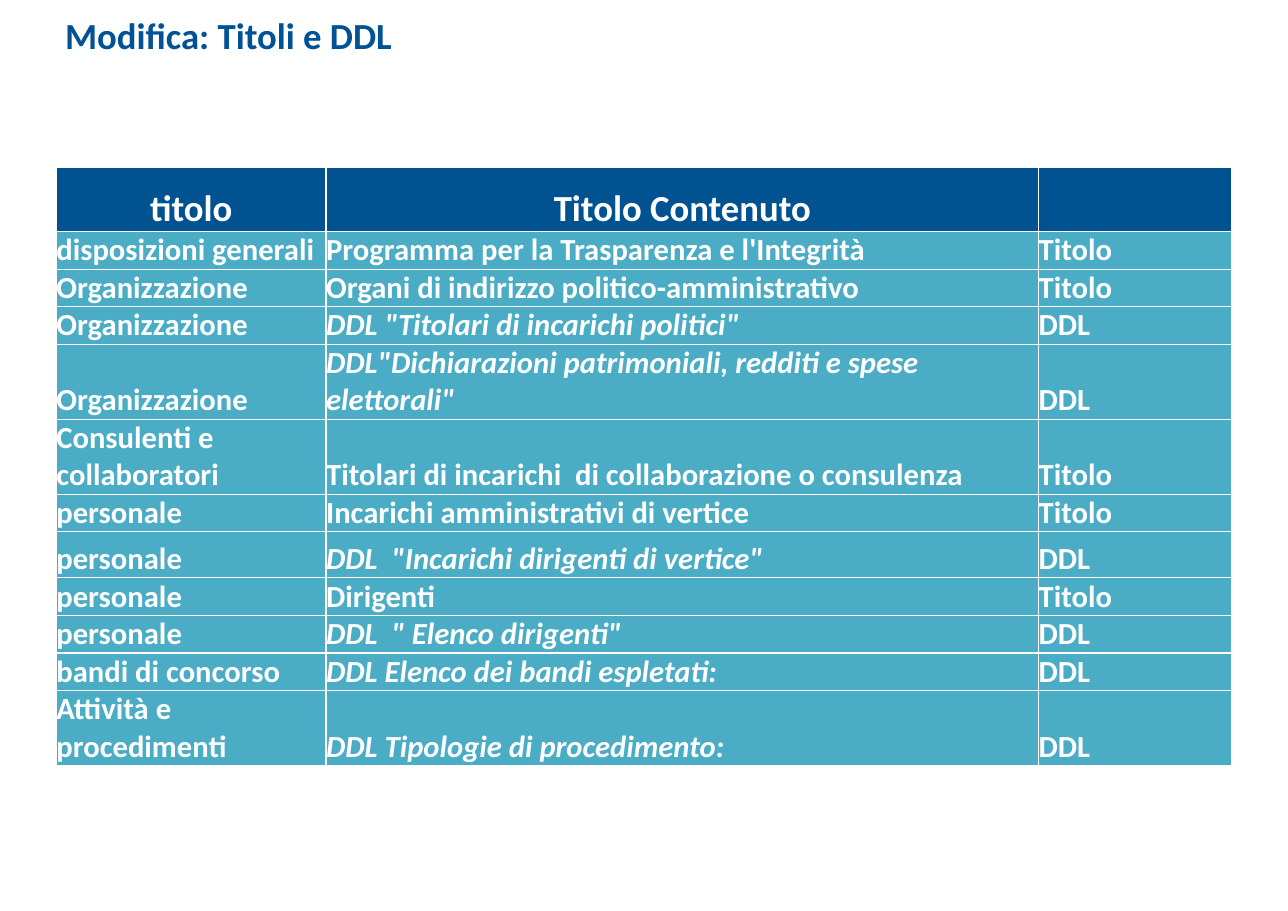
from dataclasses import dataclass

from lxml import etree
from pptx import Presentation
from pptx.dml.color import RGBColor
from pptx.enum import text
from pptx.oxml import ns
from pptx.util import Cm, Pt


@dataclass(frozen=True)
class Theme:
    font: str = "Calibri"
    title: RGBColor = RGBColor(0x00, 0x52, 0x94)
    header: RGBColor = RGBColor(0x00, 0x52, 0x91)
    body: RGBColor = RGBColor(0x4B, 0xAC, 0xC6)
    light: RGBColor = RGBColor(0xFF, 0xFF, 0xFF)
    large: Pt = Pt(24)
    normal: Pt = Pt(20)
    border: Pt = Pt(1)


THEME = Theme()
HEADINGS = ("titolo", "Titolo Contenuto", "")
COLUMN_WIDTHS = (6.22, 16.43, 4.44)
HEADER_HEIGHT, LINE_HEIGHT = 1.48, 0.85
# Section, content, kind, height in lines
ENTRIES = [
    ("disposizioni generali", "Programma per la Trasparenza e l'Integrità", "Titolo", 1),
    ("Organizzazione", "Organi di indirizzo politico-amministrativo", "Titolo", 1),
    ("Organizzazione", 'DDL "Titolari di incarichi politici"', "DDL", 1),
    ("Organizzazione", 'DDL"Dichiarazioni patrimoniali, redditi e spese elettorali"', "DDL", 2),
    ("Consulenti e collaboratori", "Titolari di incarichi  di collaborazione o consulenza", "Titolo", 2),
    ("personale", "Incarichi amministrativi di vertice", "Titolo", 1),
    ("personale", 'DDL  "Incarichi dirigenti di vertice"', "DDL", 1.25),
    ("personale", "Dirigenti", "Titolo", 1),
    ("personale", 'DDL  " Elenco dirigenti"', "DDL", 1),
    ("bandi di concorso", "DDL Elenco dei bandi espletati:", "DDL", 1),
    ("Attività e procedimenti", "DDL Tipologie di procedimento:", "DDL", 2),
]


def style_font(font, size, color):
    font.name = THEME.font
    font.size = size
    font.bold = True
    font.color.rgb = color


def add_borders(cell):
    properties = cell._tc.get_or_add_tcPr()
    for side in ("lnL", "lnR", "lnT", "lnB"):
        line = etree.SubElement(properties, ns.qn(f"a:{side}"), w=str(THEME.border))
        fill = etree.SubElement(line, ns.qn("a:solidFill"))
        etree.SubElement(fill, ns.qn("a:srgbClr"), val=str(THEME.light))


prs = Presentation()
prs.slide_width, prs.slide_height = Cm(29.7), Cm(21)
slide = prs.slides.add_slide(prs.slide_layouts[5])

# Title
title = slide.shapes.title
title.left, title.top, title.width, title.height = Cm(0), Cm(0), Cm(29.7), Cm(1.73)
frame = title.text_frame
frame.margin_left, frame.margin_right = Cm(1.5), Cm(0.6)
frame.margin_top, frame.margin_bottom = Cm(0.3), Cm(0.38)
frame.vertical_anchor = text.MSO_ANCHOR.TOP
frame.text = "Modifica: Titoli e DDL"
frame.paragraphs[0].alignment = text.PP_ALIGN.LEFT
style_font(frame.paragraphs[0].runs[0].font, THEME.large, THEME.title)

# Table of changes
heights = [HEADER_HEIGHT] + [LINE_HEIGHT * entry[3] for entry in ENTRIES]
changes = slide.shapes.add_table(
    len(heights), len(HEADINGS), Cm(1.3), Cm(3.86),
    Cm(sum(COLUMN_WIDTHS)), Cm(sum(heights)),
).table
for column, width in zip(changes.columns, COLUMN_WIDTHS):
    column.width = Cm(width)
for row, height in zip(changes.rows, heights):
    row.height = Cm(height)

for row_index, values in enumerate([HEADINGS] + [entry[:3] for entry in ENTRIES]):
    is_header = row_index == 0
    for column_index, value in enumerate(values):
        cell = changes.cell(row_index, column_index)
        cell.margin_left = cell.margin_right = cell.margin_top = cell.margin_bottom = 0
        cell.vertical_anchor = text.MSO_ANCHOR.BOTTOM
        add_borders(cell)
        cell.fill.solid()
        cell.fill.fore_color.rgb = THEME.header if is_header else THEME.body
        cell.text_frame.text = value
        paragraph = cell.text_frame.paragraphs[0]
        paragraph.alignment = text.PP_ALIGN.CENTER if is_header else text.PP_ALIGN.LEFT
        for run in paragraph.runs:
            style_font(run.font, THEME.large if is_header else THEME.normal, THEME.light)
            run.font.italic = column_index == 1 and values[2] == "DDL"

prs.save("out.pptx")
